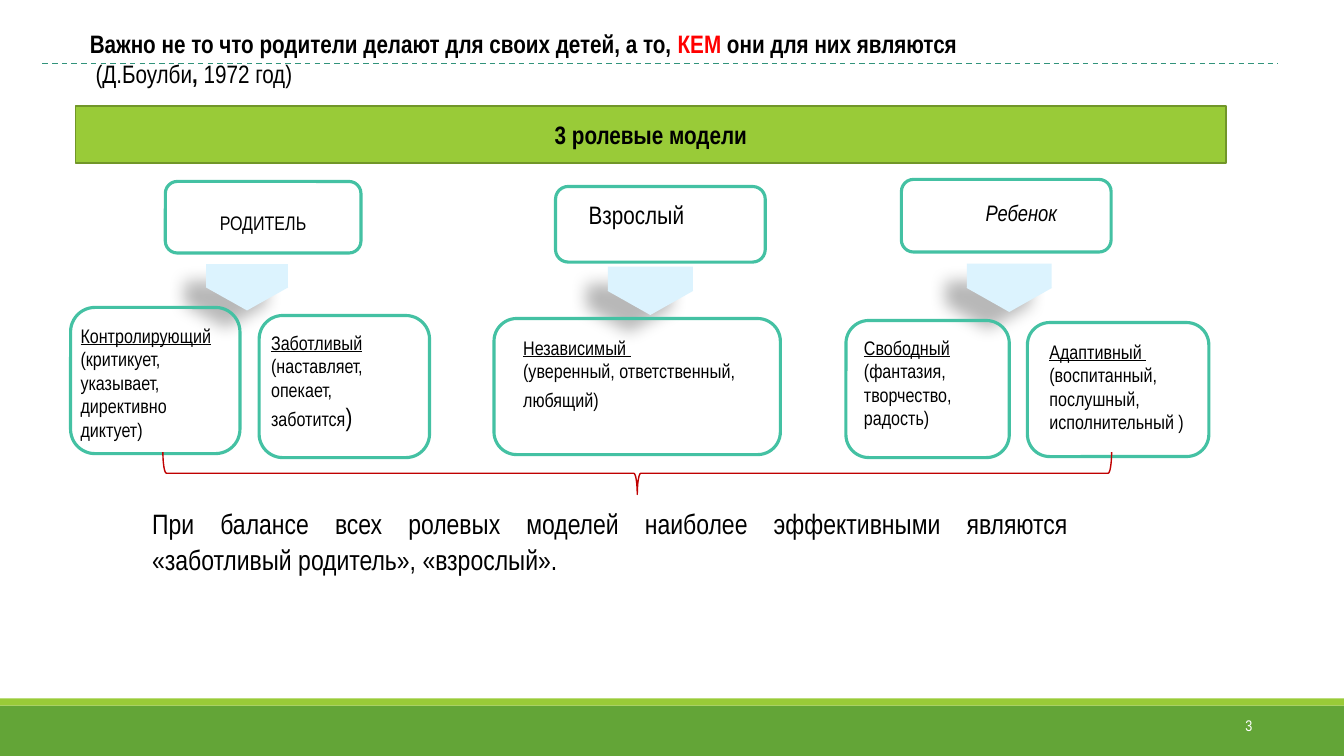
from dataclasses import dataclass

from lxml import etree
from pptx import Presentation
from pptx import util as u
from pptx.dml.color import RGBColor
from pptx.enum import dml, shapes, text
from pptx.oxml import ns

PX = u.Inches(1) // 100


@dataclass(frozen=True)
class Theme:
    font: str = "Arial Narrow"
    ink: str = "000000"
    accent: str = "FF0000"
    white: str = "FFFFFF"
    lime: str = "99CB38"
    lime_edge: str = "719629"
    green: str = "63A537"
    teal: str = "44C1A3"
    rule: str = "31937B"
    brace: str = "C00000"
    arrow: str = "DCF3FE"
    number: int = 11
    small: int = 14
    medium: int = 16
    heading: int = 18
    large: int = 20


T = Theme()
ALIGN = text.PP_ALIGN
ANCHOR = text.MSO_ANCHOR
SHAPE = shapes.MSO_SHAPE


def px(*values):
    return [v * PX for v in values]


def rgb(value):
    return RGBColor.from_string(value)


def add_run(p, content, size=T.small, color=T.ink, bold=False, italic=False, underline=False):
    r = p.add_run()
    r.text = content
    r.font.name = T.font
    r.font.size = u.Pt(size)
    r.font.color.rgb = rgb(color)
    r.font.bold = bold
    r.font.italic = italic
    r.font.underline = underline


def write(tf, paragraphs, align=ALIGN.LEFT, anchor=ANCHOR.TOP, wrap=True):
    tf.word_wrap = wrap
    tf.auto_size = text.MSO_AUTO_SIZE.NONE
    tf.vertical_anchor = anchor
    for i, runs in enumerate(paragraphs):
        p = tf.paragraphs[0] if i == 0 else tf.add_paragraph()
        p.alignment = align
        for content, style in runs:
            add_run(p, content, **style)


def add_text(s, box, paragraphs, **layout):
    sp = s.shapes.add_textbox(*px(*box))
    write(sp.text_frame, paragraphs, **layout)
    return sp


def add_figure(s, kind, box, fill=None, line=None, width=1.0):
    sp = s.shapes.add_shape(kind, *px(*box))
    sp.shadow.inherit = False
    if fill:
        sp.fill.solid()
        sp.fill.fore_color.rgb = rgb(fill)
    else:
        sp.fill.background()
    if line:
        sp.line.color.rgb = rgb(line)
        sp.line.width = u.Pt(width)
    else:
        sp.line.fill.background()
    return sp


def add_frame(s, box):
    add_figure(s, SHAPE.ROUNDED_RECTANGLE, box, line=T.teal, width=2.25)


def add_down_arrow(s, box):
    sp = add_figure(s, SHAPE.LEFT_ARROW, box, fill=T.arrow)
    sp.rotation = 270
    sp.adjustments[0] = 0.99
    sp.adjustments[1] = 0.5
    effects = sp._element.spPr.find(ns.qn("a:effectLst"))
    shadow = etree.SubElement(effects, ns.qn("a:outerShdw"), blurRad=str(u.Pt(11.8)),
                              dist=str(u.Pt(19.7)), dir=str(141 * 60000), rotWithShape="0")
    color = etree.SubElement(shadow, ns.qn("a:srgbClr"), val=T.ink)
    etree.SubElement(color, ns.qn("a:alpha"), val="28000")


def add_rule(s, x1, y1, x2, y2):
    c = s.shapes.add_connector(shapes.MSO_CONNECTOR.STRAIGHT, *px(x1, y1, x2, y2))
    c.line.color.rgb = rgb(T.rule)
    c.line.width = u.Pt(1)
    c.line.dash_style = dml.MSO_LINE.DASH
    etree.SubElement(c._element.spPr, ns.qn("a:effectLst"))


def add_title(s):
    title = s.shapes.title
    title.left, title.top, title.width, title.height = px(79, 23, 1173, 71)
    plain = dict(size=T.heading)
    bold = dict(size=T.heading, bold=True)
    write(title.text_frame, [
        [("Важно не то что родители делают для своих детей, а то, ", bold),
         ("КЕМ", dict(bold, color=T.accent)),
         (" они для них являются", bold)],
        [(" ", bold), ("(Д.Боулби", plain), (", ", bold), ("1972 год)", plain)],
    ])


def add_roles(s):
    roles = [
        ((164, 180, 194, 71), (203, 204, 116, 34), "РОДИТЕЛЬ", {}, ALIGN.CENTER, True),
        ((551, 185, 208, 75), (574, 193, 180, 40), "Взрослый", dict(size=T.heading),
         ALIGN.LEFT, True),
        ((894, 178, 208, 72), (967, 193, 92, 37), "Ребенок",
         dict(size=T.medium, italic=True), ALIGN.CENTER, False),
    ]
    for frame, label, name, style, align, wrap in roles:
        add_frame(s, frame)
        add_text(s, label, [[(name, style)]], align=align, wrap=wrap)
    for box in [(222, 244, 46, 82), (621, 246, 48, 85), (977, 243, 48, 85)]:
        add_down_arrow(s, box)


def add_traits(s):
    head = dict(underline=True)
    big = dict(size=T.heading)
    traits = [
        ((70, 305, 168, 145), (70, 316, 171, 128),
         [[("Контролирующий", head), (" (критикует, указывает, директивно диктует)", {})]]),
        ((257, 313, 169, 141), (259, 323, 132, 111),
         [[("Заботливый ", head), ("(наставляет, опекает, заботится", {}), (")", big)]]),
        ((490, 316, 284, 135), (509, 328, 285, 89),
         [[("Независимый ", head)],
          [("(уверенный, ответственный, любящий)", {}), (" ", big)]]),
        ((839, 318, 162, 136), (847, 328, 149, 135),
         [[("Свободный", head)], [("(фантазия, творчество, радость)", {})]]),
        ((1019, 320, 180, 133), (1031, 332, 157, 104),
         [[("Адаптивный ", head)], [("(воспитанный, послушный, исполнительный )", {})]]),
    ]
    for frame, label, paragraphs in traits:
        add_frame(s, frame)
        add_text(s, label, paragraphs)


def add_conclusion(s):
    brace = add_figure(s, SHAPE.RIGHT_BRACE, (611, -1, 42, 941), line=T.brace)
    brace.rotation = 90
    sp = add_text(s, (91, 495, 978, 82), [[(
        "При балансе всех ролевых моделей наиболее эффективными являются "
        "«заботливый родитель», «взрослый».", dict(size=T.large))]], align=ALIGN.JUSTIFY)
    p = sp.text_frame.paragraphs[0]
    p.line_spacing = 1.07
    p.space_after = u.Pt(6)
    p._p.get_or_add_pPr().set("marL", str(50 * PX))


def main():
    prs = Presentation()
    prs.slide_width, prs.slide_height = px(1333, 750)
    s = prs.slides.add_slide(prs.slide_layouts.get_by_name("Title Only"))
    add_figure(s, SHAPE.RECTANGLE, (0, 700, 1333, 50), fill=T.green)
    add_figure(s, SHAPE.RECTANGLE, (0, 693, 1333, 7), fill=T.lime)
    add_text(s, (1109, 700, 143, 40), [[("3", dict(size=T.number, color=T.white))]],
             align=ALIGN.RIGHT, anchor=ANCHOR.MIDDLE)
    add_rule(s, 42, 63, 1268, 63)
    add_title(s)
    banner = add_figure(s, SHAPE.RECTANGLE, (75, 105, 1141, 57), T.lime, T.lime_edge, 1.25)
    write(banner.text_frame, [[("3 ролевые модели", dict(size=T.heading, bold=True))]],
          align=ALIGN.CENTER, anchor=ANCHOR.MIDDLE)
    add_roles(s)
    add_traits(s)
    add_conclusion(s)
    prs.save("out.pptx")


if __name__ == "__main__":
    main()
